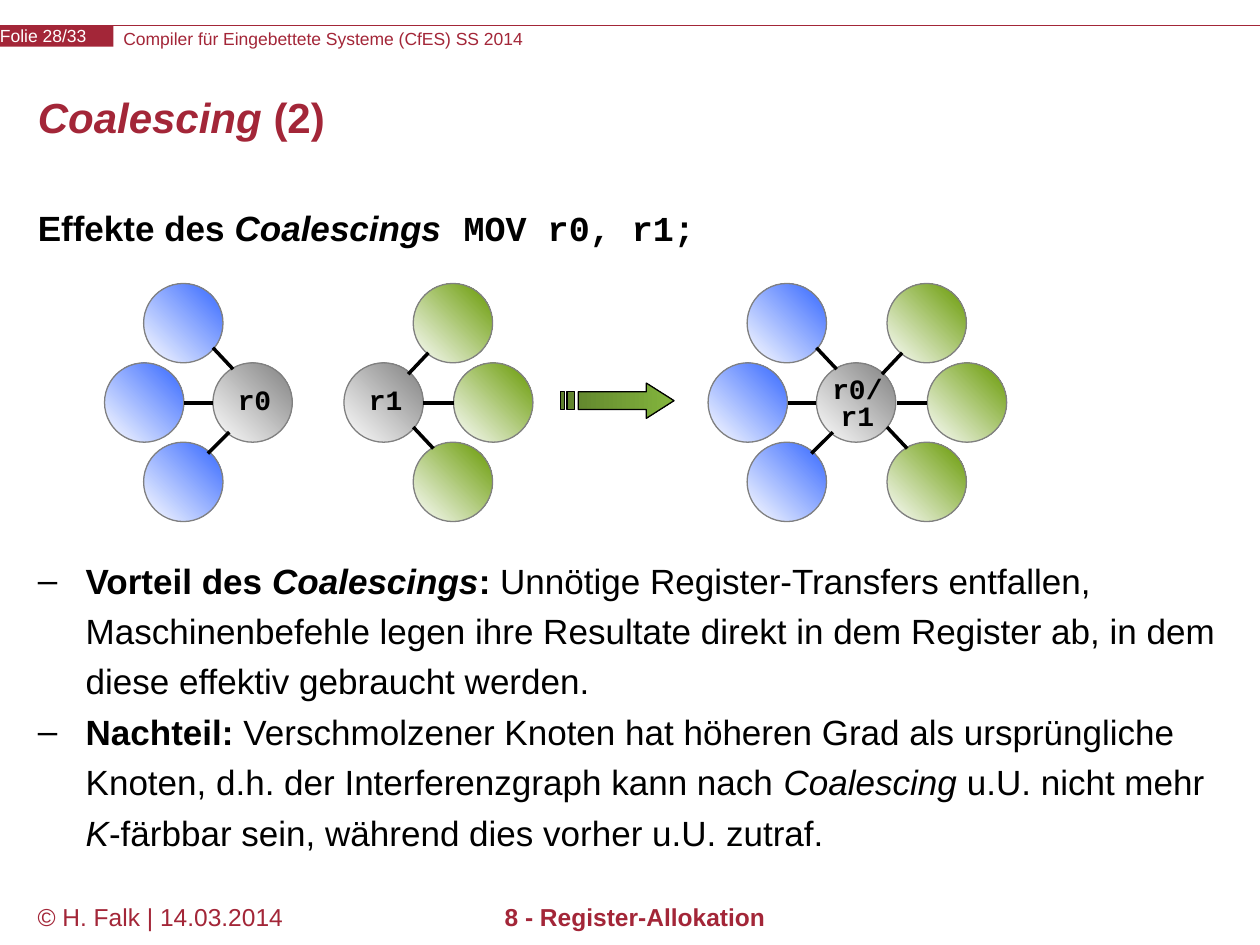
from lxml import etree
from pptx import Presentation
from pptx.dml.color import RGBColor
from pptx.enum import shapes as kinds, text as styles
from pptx.oxml import ns
from pptx.util import Inches, Pt

CRIMSON, BLACK, WHITE = "A32638", "000000", "FFFFFF"
GRAY, BLUE, GREEN = "808080", "3366FF", "669900"
NODE = 0.63


def color(value):
    return RGBColor.from_string(value)


def inches(*values):
    return [Inches(value) for value in values]


def set_font(font, size, value, name="Arial", bold=False):
    font.size, font.name, font.bold = Pt(size), name, bold
    font.color.rgb = color(value)


def outline(shape, value, width):
    shape.line.color.rgb = color(value)
    shape.line.width = Pt(width)


def gradient(shape, start, end, angle):
    shape.fill.gradient()
    shape.fill.gradient_angle = angle
    for stop, value, position in zip(shape.fill.gradient_stops, (start, end), (0, 1)):
        stop.color.rgb = color(value)
        stop.position = position


def add_line(slide, start, end, value, width):
    line = slide.shapes.add_connector(
        kinds.MSO_CONNECTOR.STRAIGHT, *inches(*start, *end))
    outline(line, value, width)
    etree.SubElement(line._element.spPr, ns.qn("a:effectLst"))


def add_label(slide, box, lines, size, value, align=None, name="Arial",
              bold=False, inset=0.0, spacings=(None,)):
    frame = slide.shapes.add_textbox(*inches(*box)).text_frame
    frame.word_wrap = True
    frame.margin_left = frame.margin_right = Inches(inset)
    frame.margin_top = frame.margin_bottom = Inches(inset / 2)
    frame.text = lines
    for paragraph, spacing in zip(frame.paragraphs, spacings):
        paragraph.alignment = align
        paragraph.line_spacing = spacing
        set_font(paragraph.font, size, value, name, bold)


def add_runs(paragraph, runs):
    for wording, bold, italic in runs:
        run = paragraph.add_run()
        run.text = wording
        run.font.bold, run.font.italic = bold, italic
    return run


def set_bullet(paragraph, mark, indent):
    properties = paragraph._p.get_or_add_pPr()
    properties.set("marL", str(Inches(indent)))
    properties.set("indent", str(-Inches(indent)))
    if mark:
        etree.SubElement(properties, ns.qn("a:buChar"), char=mark)
    else:
        etree.SubElement(properties, ns.qn("a:buNone"))


def fill_header(slide, left, top, width):
    add_line(slide, (left, top), (left + width, top), CRIMSON, 0.75)
    add_label(slide, (0.98, top + 0.02, 6.6, 0.17),
              "Compiler für Eingebettete Systeme (CfES) SS 2014", 10, CRIMSON)
    counter = slide.shapes.add_shape(
        kinds.MSO_SHAPE.RECTANGLE, *inches(left, top, 0.9, 0.17))
    counter.shadow.inherit = False
    counter.fill.solid()
    counter.fill.fore_color.rgb = color(CRIMSON)
    counter.line.fill.background()
    frame = counter.text_frame
    frame.margin_left = frame.margin_right = frame.margin_top = frame.margin_bottom = 0
    frame.word_wrap = False
    frame.text = "Folie 28/33"
    set_font(frame.paragraphs[0].font, 10, WHITE)


def fill_footer(slide, top, height):
    add_label(slide, (0.2, top, 2.2, height), "© H. Falk | 14.03.2014", 14,
              CRIMSON, inset=0.1)
    add_label(slide, (2.01, top, 6.06, height), "8 - Register-Allokation", 14,
              CRIMSON, styles.PP_ALIGN.CENTER, bold=True, inset=0.1)


def place(placeholder, box, anchor):
    placeholder.left, placeholder.top, placeholder.width, placeholder.height = inches(*box)
    frame = placeholder.text_frame
    frame.auto_size = styles.MSO_AUTO_SIZE.NONE
    frame.vertical_anchor = anchor
    return frame


def fill_title(title, box):
    paragraph = place(title, box, styles.MSO_ANCHOR.MIDDLE).paragraphs[0]
    paragraph.alignment = styles.PP_ALIGN.LEFT
    paragraph.line_spacing = Pt(24)
    set_font(paragraph.font, 24, CRIMSON, bold=True)
    add_runs(paragraph, [("Coalescing ", True, True), ("(2)", True, False)])


def fill_body(body, box):
    frame = place(body, box, styles.MSO_ANCHOR.TOP)
    effects = [("Effekte des ", True, False), ("Coalescings\t", True, True),
               ("MOV r0, r1;", True, False)]
    benefit = [("Vorteil des ", True, False), ("Coalescings", True, True),
               (":", True, False),
               (" Unnötige Register-Transfers entfallen, Maschinenbefehle legen "
                "ihre Resultate direkt in dem Register ab, in dem diese effektiv "
                "gebraucht werden.", False, False)]
    drawback = [("Nachteil:", True, False),
                (" Verschmolzener Knoten hat höheren Grad als ursprüngliche Knoten, "
                 "d.h. der Interferenzgraph kann nach ", False, False),
                ("Coalescing", False, True), (" u.U. nicht mehr ", False, False),
                ("K", False, True),
                ("-färbbar sein, während dies vorher u.U. zutraf.", False, False)]
    for index, (runs, mark, gap) in enumerate(
            [(effects, None, 172.8), (benefit, "–", 0), (drawback, "–", 0)]):
        paragraph = frame.paragraphs[0] if index == 0 else frame.add_paragraph()
        paragraph.line_spacing = 1.2
        paragraph.space_before, paragraph.space_after = Pt(0), Pt(gap)
        set_bullet(paragraph, mark, 0.38)
        set_font(paragraph.font, 20, BLACK)
        last = add_runs(paragraph, runs)
        if runs is effects:
            last.font.name = "Courier New"


def add_node(slide, left, top, value):
    node = slide.shapes.add_shape(
        kinds.MSO_SHAPE.OVAL, *inches(left, top, NODE, NODE))
    node.shadow.inherit = False
    gradient(node, WHITE, value, 45)
    outline(node, GRAY, 0.75)


def add_hub(slide, left, top, name, box, spacings=(None,)):
    add_node(slide, left, top, GRAY)
    x, y, width, height = box
    add_label(slide, (left + x, top + y, width, height), name, 16, BLACK,
              styles.PP_ALIGN.CENTER, "Courier New", True, spacings=spacings)


def add_neighbors(slide, left, top, value, places, edges):
    for x, y in places:
        add_node(slide, left + x, top + y, value)
    for x1, y1, x2, y2 in edges:
        add_line(slide, (left + x1, top + y1), (left + x2, top + y2), BLACK, 2)


def add_blue_side(slide, left, top):
    add_neighbors(slide, left, top, BLUE,
                  [(-0.55, -NODE), (-0.86, 0), (-0.55, NODE)],
                  [(0, -0.12, 0.16, 0.05), (-0.23, 0.32, 0, 0.32),
                   (0.13, 0.55, -0.04, 0.72)])


def add_green_side(slide, left, top):
    add_neighbors(slide, left, top, GREEN,
                  [(0.55, -NODE), (0.87, 0), (0.55, NODE)],
                  [(0.67, -0.08, 0.51, 0.09), (NODE, 0.32, 0.87, 0.32),
                   (0.55, 0.51, 0.71, 0.68)])


def add_merge_arrow(slide, left, top):
    head = [(14, 7), (68, 7), (68, 0), (90, 14), (68, 28), (68, 21), (14, 21)]
    bars = [[(x, 7), (x + width, 7), (x + width, 21), (x, 21)]
            for x, width in ((5, 6), (0, 3))]
    builder = slide.shapes.build_freeform(*head[0], scale=Inches(0.01))
    builder.add_line_segments(head[1:], close=True)
    for bar in bars:
        builder.move_to(*bar[0])
        builder.add_line_segments(bar[1:], close=True)
    arrow = builder.convert_to_shape(*inches(left, top))
    arrow.left, arrow.top = inches(left, top)
    arrow.shadow.inherit = False
    gradient(arrow, "5E812C", "83B53D", 0)
    outline(arrow, BLACK, 0.75)


def fill_graphs(slide, top):
    add_hub(slide, 1.69, top, "r0", (0.09, 0.16, 0.48, 0.27))
    add_blue_side(slide, 1.69, top)
    add_hub(slide, 2.73, top, "r1", (0.09, 0.16, 0.48, 0.27))
    add_green_side(slide, 2.73, top)
    add_merge_arrow(slide, 4.45, top + 0.16)
    add_hub(slide, 6.48, top, "r0/\nr1", (0.02, 0.12, 0.61, 0.43), (0.8, 0.8))
    add_blue_side(slide, 6.48, top)
    add_green_side(slide, 6.49, top)


def main():
    deck = Presentation()
    deck.slide_width, deck.slide_height = inches(10, 7.5)
    slide = deck.slides.add_slide(deck.slide_layouts[1])
    fill_header(slide, 0, 0.2, 10)
    fill_footer(slide, 7.11, 0.5)
    fill_title(slide.shapes.title, (0.2, 0.6, 9.61, 0.72))
    fill_body(slide.placeholders[1], (0.2, 1.52, 9.61, 5.46))
    fill_graphs(slide, 2.88)
    deck.save("out.pptx")


if __name__ == "__main__":
    main()
